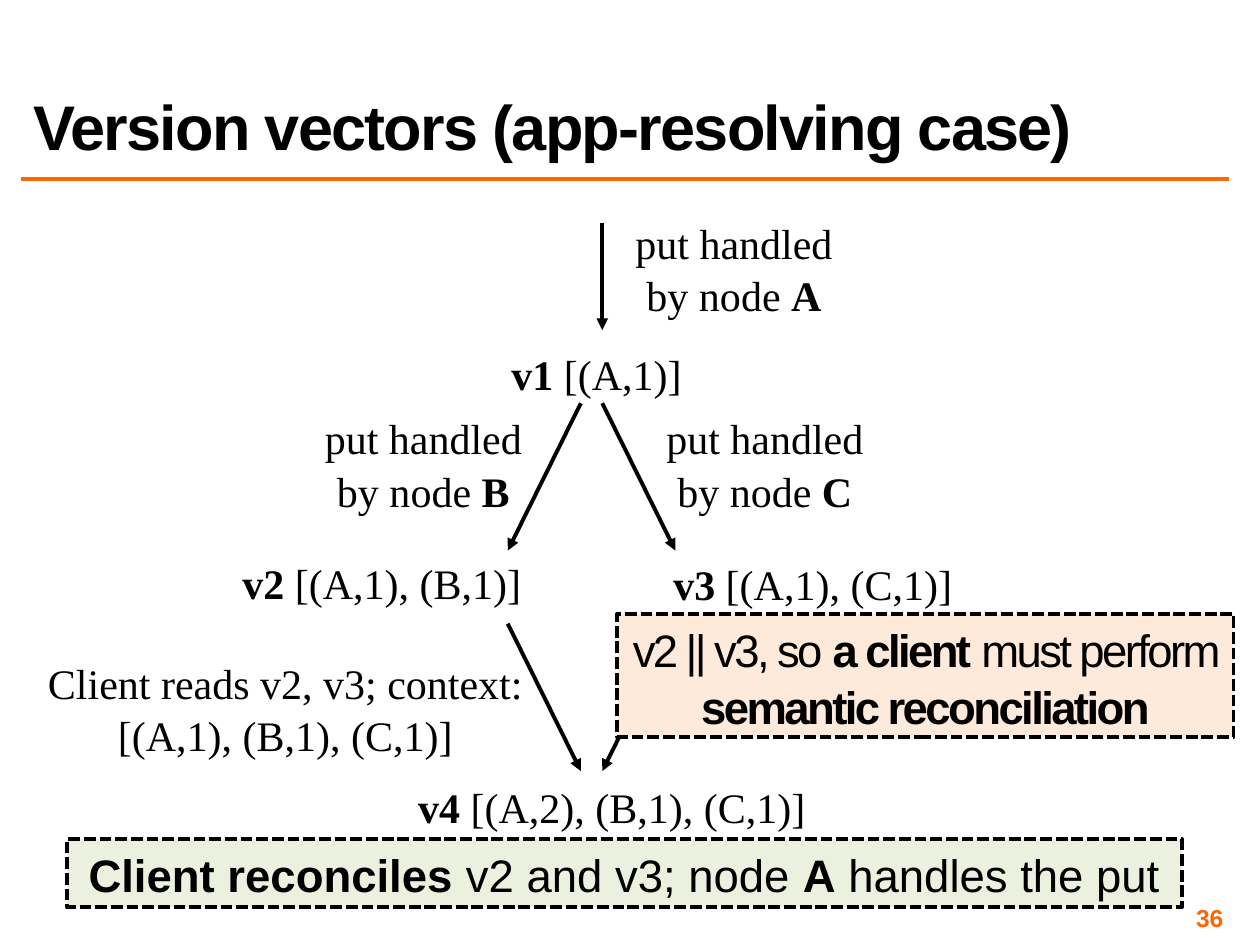
import lxml.etree
import pptx
import pptx.dml.color
import pptx.enum.dml
import pptx.enum.shapes
import pptx.enum.text
import pptx.oxml.ns
import pptx.util
from pptx.util import Inches

BLACK = pptx.dml.color.RGBColor(0x00, 0x00, 0x00)
ORANGE = pptx.dml.color.RGBColor(0xFF, 0x66, 0x00)
PEACH = pptx.dml.color.RGBColor(0xFD, 0xEA, 0xDA)
PALE_GREEN = pptx.dml.color.RGBColor(0xEB, 0xF1, 0xDE)
ALIGN = pptx.enum.text.PP_ALIGN
ANCHOR = pptx.enum.text.MSO_ANCHOR
SANS = "Arial"
SERIF = "Times New Roman"


def write(frame, pieces, font, size, color=BLACK, align=ALIGN.CENTER, spacing=1.04, tracking=0):
    """Fill a text frame with (text, bold) pieces in one paragraph."""
    frame.word_wrap = True
    paragraph = frame.paragraphs[0]
    paragraph.alignment = align
    paragraph.line_spacing = spacing
    for text, bold in pieces:
        run = paragraph.add_run()
        run.text = text
        run.font.name = font
        run.font.size = pptx.util.Pt(size)
        run.font.bold = bold
        run.font.color.rgb = color
        if tracking:
            run.font._element.set("spc", str(int(tracking * 100)))


def add_label(slide, left, top, width, height, pieces):
    """Add a centred serif label of the version graph."""
    label = slide.shapes.add_textbox(Inches(left), Inches(top), Inches(width), Inches(height))
    write(label.text_frame, pieces, SERIF, 24)


def add_version(slide, left, top, width, name, vector):
    """Add a version name followed by its vector."""
    add_label(slide, left, top, width, 0.5, [(name, True), (f" [{vector}]", False)])


def add_put(slide, left, top, width, node):
    """Add the note naming the node that handles a put."""
    add_label(slide, left, top, width, 0.91, [("put handled by node ", False), (node, True)])


def add_line(slide, start, end, color, weight):
    """Add a straight line without shadow and return it."""
    line = slide.shapes.add_connector(
        pptx.enum.shapes.MSO_CONNECTOR.STRAIGHT, *map(Inches, start + end))
    line.line.color.rgb = color
    line.line.width = pptx.util.Pt(weight)
    lxml.etree.SubElement(line._element.spPr, pptx.oxml.ns.qn("a:effectLst"))
    return line


def add_arrow(slide, start, end):
    """Add a black arrow from start to end."""
    arrow = add_line(slide, start, end, BLACK, 2.25)
    outline = arrow.line._get_or_add_ln()
    lxml.etree.SubElement(outline, pptx.oxml.ns.qn("a:tailEnd"), type="triangle")


def add_callout(slide, left, top, width, height, fill, pieces, tracking=0):
    """Add a filled box with a dashed outline and sans-serif text."""
    callout = slide.shapes.add_shape(
        pptx.enum.shapes.MSO_SHAPE.RECTANGLE,
        Inches(left), Inches(top), Inches(width), Inches(height))
    callout.shadow.inherit = False
    callout.fill.solid()
    callout.fill.fore_color.rgb = fill
    callout.line.color.rgb = BLACK
    callout.line.width = pptx.util.Pt(2.25)
    callout.line.dash_style = pptx.enum.dml.MSO_LINE.SQUARE_DOT
    callout.line._get_or_add_ln().find(pptx.oxml.ns.qn("a:prstDash")).set("val", "sysDash")
    callout.text_frame.vertical_anchor = ANCHOR.TOP
    write(callout.text_frame, pieces, SANS, 26, tracking=tracking)


def add_heading(slide):
    """Add the title, its rule and the slide number."""
    add_line(slide, (0.17, 1.42), (9.75, 1.42), ORANGE, 2)
    number = slide.shapes.add_textbox(Inches(7.42), Inches(7.17), Inches(2.33), Inches(0.23))
    frame = number.text_frame
    frame.vertical_anchor = ANCHOR.MIDDLE
    frame.margin_left = frame.margin_right = Inches(0.04)
    frame.margin_top = frame.margin_bottom = Inches(0.04)
    write(frame, [("36", True)], SANS, 14, ORANGE, ALIGN.RIGHT, 1.0)
    title = slide.shapes.add_textbox(Inches(0.17), Inches(0.17), Inches(9.58), Inches(1.17))
    title.text_frame.vertical_anchor = ANCHOR.BOTTOM
    write(title.text_frame, [("Version vectors (app-resolving case)", True)],
          SANS, 36, align=ALIGN.LEFT, spacing=0.8, tracking=-1)


def add_graph(slide):
    """Add the versions, the puts between them and the arrows."""
    add_version(slide, 3.86, 2.7, 1.75, "v1", "(A,1)")
    add_version(slide, 1.78, 4.36, 2.5, "v2", "(A,1), (B,1)")
    add_version(slide, 5.2, 4.37, 2.5, "v3", "(A,1), (C,1)")
    add_version(slide, 3.19, 6.14, 3.33, "v4", "(A,2), (B,1), (C,1)")
    add_put(slide, 4.78, 1.66, 2.09, "A")
    add_put(slide, 2.36, 3.21, 2, "B")
    add_put(slide, 5.03, 3.21, 2.08, "C")
    add_label(slide, 0.25, 5.15, 4.03, 0.91,
              [("Client reads v2, v3; context: [(A,1), (B,1), (C,1)]", False)])
    add_arrow(slide, (4.78, 1.77), (4.78, 2.62))
    for inner, outer in ((4.61, 4.03), (4.78, 5.36)):
        add_arrow(slide, (inner, 3.2), (outer, 4.37))
        add_arrow(slide, (outer, 4.95), (inner, 6.12))


def main():
    """Build the slide and save it."""
    deck = pptx.Presentation()
    deck.slide_width = Inches(10)
    deck.slide_height = Inches(7.5)
    slide = deck.slides.add_slide(deck.slide_layouts[6])
    add_heading(slide)
    add_graph(slide)
    add_callout(slide, 4.9, 4.87, 4.89, 0.98, PEACH,
                [("v2 || v3, so ", False), ("a client ", True),
                 ("must perform ", False), ("semantic reconciliation", True)], tracking=-1.5)
    add_callout(slide, 0.53, 6.66, 8.85, 0.54, PALE_GREEN,
                [("Client reconciles ", True), ("v2 and v3; node ", False),
                 ("A", True), (" handles the put", False)])
    deck.save("out.pptx")


if __name__ == "__main__":
    main()
